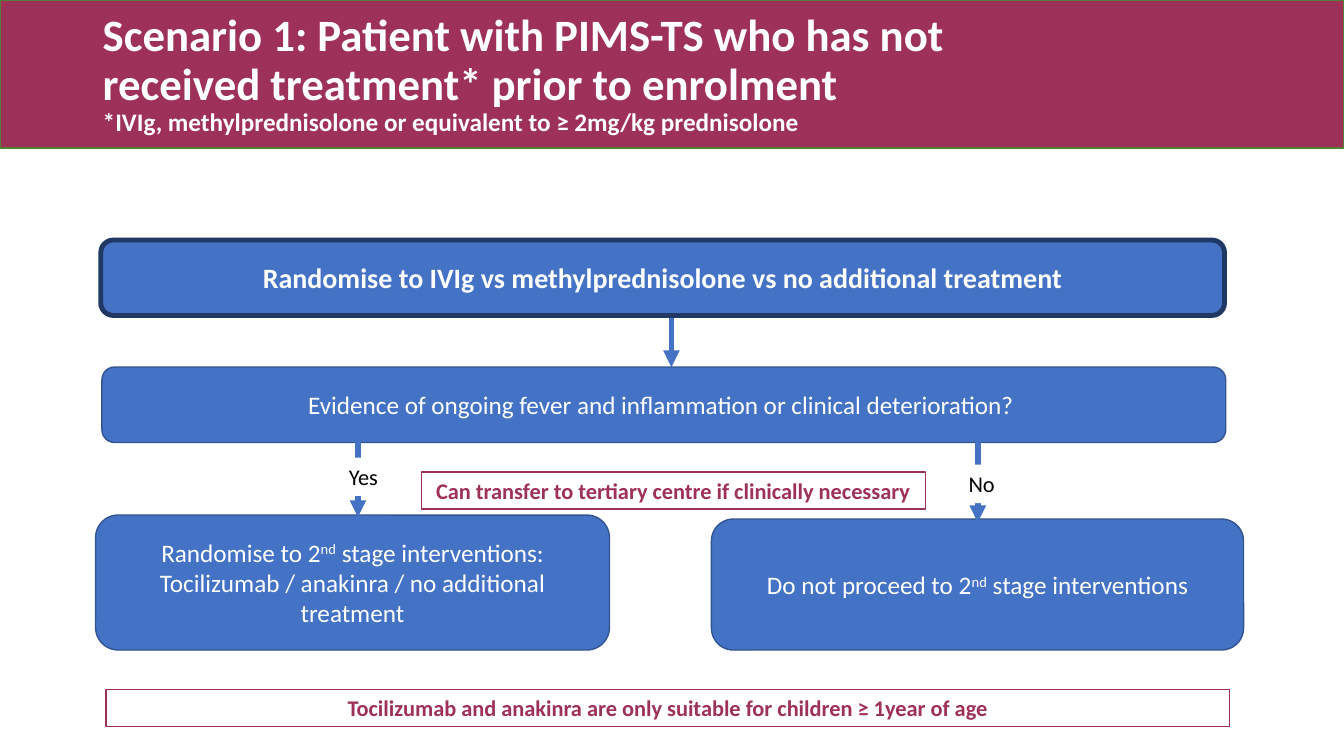
from lxml import etree
from pptx import Presentation
from pptx.dml.color import RGBColor
from pptx.enum.shapes import MSO_CONNECTOR as Connector, MSO_SHAPE as Shape
from pptx.enum.text import MSO_ANCHOR as Anchor, PP_ALIGN as Align
from pptx.oxml.ns import qn
from pptx.util import Cm, Pt

FONT = "Calibri"
BERRY, BLUE, WHITE, BLACK = "9E3159", "4472C4", "FFFFFF", "000000"
EDGE, STRONG_EDGE, BAND_EDGE = "325491", "203864", "538035"
WIDE = 28.32


def rgb(value):
    return RGBColor.from_string(value)


def style_run(run, size, color, bold=False):
    run.font.name = FONT
    run.font.size = Pt(size)
    run.font.bold = bold
    run.font.color.rgb = rgb(color)


def add_panel(slide, box, fill=None, edge=None, edge_width=1, kind=Shape.RECTANGLE):
    panel = slide.shapes.add_shape(kind, *map(Cm, box))
    panel.shadow.inherit = False
    if fill:
        panel.fill.solid()
        panel.fill.fore_color.rgb = rgb(fill)
    else:
        panel.fill.background()
    if edge:
        panel.line.color.rgb = rgb(edge)
        panel.line.width = Pt(edge_width)
    else:
        panel.line.fill.background()
    return panel


def write(panel, text, size, color, bold=False, align=Align.CENTER):
    """Fill a panel with text; parts between ^ marks become superscript."""
    frame = panel.text_frame
    frame.word_wrap = True
    frame.vertical_anchor = Anchor.MIDDLE
    for index, line in enumerate(text.split("\n")):
        paragraph = frame.add_paragraph() if index else frame.paragraphs[0]
        paragraph.alignment = align
        for position, part in enumerate(line.split("^")):
            run = paragraph.add_run()
            run.text = part
            style_run(run, size, color, bold)
            if position % 2:
                run.font._element.set("baseline", "30000")


def add_title(slide, heading, footnote):
    add_panel(slide, (0, 0, 33.87, 3.73), BERRY, BAND_EDGE)
    title = slide.shapes.add_textbox(Cm(2.34), Cm(0.05), Cm(22.83), Cm(3.68))
    frame = title.text_frame
    frame.word_wrap = True
    frame.vertical_anchor = Anchor.MIDDLE
    paragraph = frame.paragraphs[0]
    paragraph.text = f"{heading}\v{footnote}"
    paragraph.line_spacing = 0.9
    for run, size in zip(paragraph.runs, (32, 18)):
        style_run(run, size, WHITE, bold=True)


def add_step(slide, box, text, size=18, bold=False, edge=EDGE, edge_width=1):
    step = add_panel(slide, box, BLUE, edge, edge_width, Shape.ROUNDED_RECTANGLE)
    write(step, text, size, WHITE, bold)


def add_arrow(slide, x, top, bottom):
    arrow = slide.shapes.add_connector(
        Connector.STRAIGHT, Cm(x), Cm(top), Cm(x), Cm(bottom))
    arrow.line.color.rgb = rgb(BLUE)
    arrow.line.width = Pt(4)
    etree.SubElement(arrow.line._get_or_add_ln(), qn("a:tailEnd"), type="triangle")
    etree.SubElement(arrow._element.spPr, qn("a:effectLst"))


def add_branch(slide, x, top, answer, answer_top):
    """Draw an arrow whose answer label covers its middle."""
    add_arrow(slide, x, top, top + 2.01)
    label = add_panel(slide, (x - 0.48, answer_top, 1.7, 0.97), WHITE)
    write(label, answer, 16, BLACK, align=Align.LEFT)


def add_note(slide, left, top, width, text):
    note = add_panel(slide, (left, top, width, 0.94), edge=BERRY)
    write(note, text, 16, BERRY, bold=True)


def main():
    deck = Presentation()
    deck.slide_width, deck.slide_height = Cm(33.87), Cm(19.05)
    slide = deck.slides.add_slide(deck.slide_layouts[6])

    add_title(slide,
              "Scenario 1: Patient with PIMS-TS who has not received treatment* prior to enrolment ",
              "*IVIg, methylprednisolone or equivalent to ≥ 2mg/kg prednisolone")

    add_arrow(slide, 16.92, 7.95, 9.25)
    add_step(slide, (2.54, 6.05, WIDE, 1.9),
             "Randomise to IVIg vs methylprednisolone vs no additional treatment",
             size=20, bold=True, edge=STRONG_EDGE, edge_width=3.5)
    add_step(slide, (2.57, 9.25, WIDE, 1.9),
             "Evidence of ongoing fever and inflammation or clinical deterioration? ")
    add_step(slide, (2.41, 12.98, 12.95, 3.4),
             "Randomise to 2^nd^ stage interventions:\n"
             "Tocilizumab / anakinra / no additional treatment")
    add_step(slide, (17.93, 13.08, 13.41, 3.3),
             "Do not proceed to 2^nd^ stage interventions")

    add_branch(slide, 9.02, 11.02, "Yes", 11.53)
    add_branch(slide, 24.64, 11.15, "No", 11.71)

    add_note(slide, 10.62, 11.89, 12.7,
             "Can transfer to tertiary centre if clinically necessary")
    add_note(slide, 2.67, 17.37, WIDE,
             "Tocilizumab and anakinra are only suitable for children ≥ 1year of age")

    deck.save("out.pptx")


if __name__ == "__main__":
    main()
